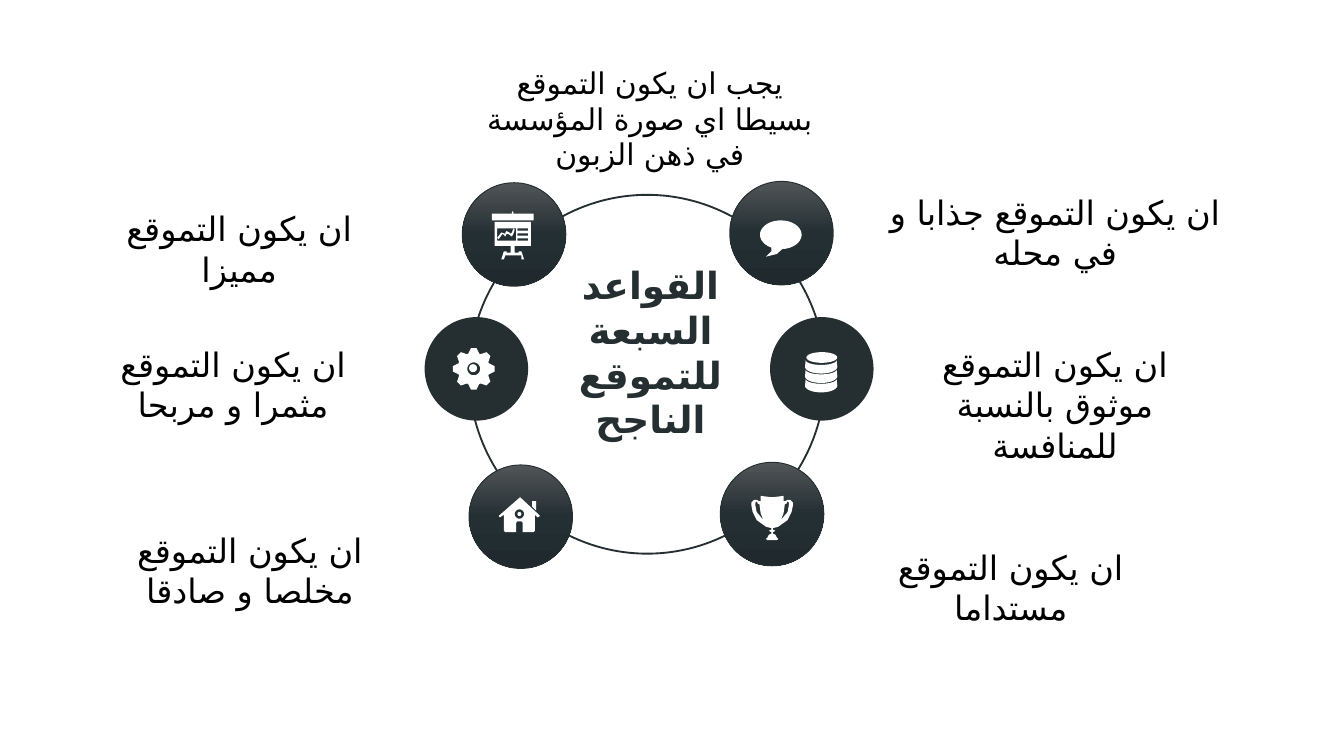
from math import cos, radians, sin

from pptx import Presentation
from pptx.dml.color import RGBColor
from pptx.enum.shapes import MSO_SHAPE
from pptx.enum.text import MSO_ANCHOR, MSO_AUTO_SIZE, PP_ALIGN
from pptx.oxml import parse_xml
from pptx.oxml.ns import nsdecls, qn
from pptx.util import Inches, Pt

OVAL = MSO_SHAPE.OVAL
TOP = MSO_ANCHOR.TOP
GROW = MSO_AUTO_SIZE.SHAPE_TO_FIT_TEXT
CENTER = PP_ALIGN.CENTER

DARK = RGBColor(0x25, 0x2F, 0x32)
WHITE = RGBColor(0xFF, 0xFF, 0xFF)
BLACK = RGBColor(0, 0, 0)
SHADES = ((0, "515557"), (50, "242F33"), (100, "202A2E"))
FONT = "Noto Sans CJK SC"
ARABIC = "DejaVu Sans"
DISC = 0.77

TITLE = "القواعد السبعة للتموقع الناجح"
LABELS = (
    ("يجب ان يكون التموقع بسيطا اي صورة المؤسسة في ذهن الزبون", (3.51, 0.43, 2.65, 0.64), 16),
    ("ان يكون التموقع جذابا و في محله", (6.44, 1.38, 2.82, 0.71), 18),
    ("ان يكون التموقع موثوق بالنسبة للمنافسة", (6.7, 2.51, 2.3, 0.71), 18),
    ("ان يكون التموقع مستداما", (6.21, 4.02, 2.62, 0.4), 18),
    ("ان يكون التموقع مميزا", (0.55, 1.5, 2.46, 0.4), 18),
    ("ان يكون التموقع مثمرا و مربحا", (0.65, 2.51, 2.17, 0.71), 18),
    ("ان يكون التموقع مخلصا و صادقا", (0.58, 3.89, 2.56, 0.71), 18),
)
SHADED = ((3.44, 1.36), (3.49, 3.46), (5.36, 3.44), (5.43, 1.35))
FLAT = ((3.16, 2.36), (5.73, 2.36))

# Icon outlines, in hundredths of an inch
HOUSE = ((387, 370), (371, 384), (372, 385), (375, 383), (375, 395), (376, 396),
         (384, 396), (384, 389), (385, 388), (388, 388), (389, 389), (389, 396),
         (397, 396), (398, 395), (398, 383), (400, 385), (402, 384))
CHIMNEY = ((399, 380), (399, 373), (396, 373), (396, 377))
CUP = ((574, 370), (566, 369), (566, 373), (565, 373), (563, 372), (561, 372),
       (559, 374), (559, 376), (560, 381), (563, 387), (570, 392), (574, 393),
       (574, 394), (572, 395), (574, 396), (574, 397), (572, 398), (571, 400),
       (570, 401), (571, 402))
HANDLE = ((565, 375), (564, 375), (563, 373), (562, 374), (562, 376),
          (563, 381), (568, 387), (566, 382))
RAIL = ((382, 159), (382, 158), (381.5, 157), (381, 158), (381, 159),
        (366, 159), (366, 164), (397, 164), (397, 159))
BOARD = ((395, 183), (395, 165), (368, 165), (368, 183), (380, 183), (380, 188),
         (377, 188), (377, 187), (375, 187), (373, 193), (375, 193), (376, 190),
         (388, 190), (388, 193), (390, 193), (388, 187), (386, 187), (386, 188),
         (383, 188), (383, 183))
CURVE = ((381, 173), (380, 174), (379, 173), (377, 172), (376, 173), (376, 174),
         (373, 173), (370, 177), (371, 178), (374, 174), (376, 176), (377, 174),
         (378, 174), (381, 176), (382, 174), (383, 171), (382, 170))


def box(left, top, right, base):
    return [(left, top), (right, top), (right, base), (left, base)]


def arc(x, y, wide, high, start=0, end=360, steps=32):
    """Points on an ellipse around x, y with radii wide and high."""
    turns = [radians(start + (end - start) * i / steps) for i in range(steps + 1)]
    return [(x + wide * cos(t), y + high * sin(t)) for t in turns]


def mirror(points, axis):
    return [(2 * axis - x, y) for x, y in points]


def paint(shape, color=None, edge=None, width=1):
    shape.shadow.inherit = False
    if color is not None:
        shape.fill.solid()
        shape.fill.fore_color.rgb = color
    if edge is None:
        shape.line.fill.background()
    else:
        shape.line.color.rgb = edge
        shape.line.width = Pt(width)


def add_oval(shapes, left, top, wide, high):
    return shapes.add_shape(OVAL, *map(Inches, (left, top, wide, high)))


def add_dot(shapes, *place):
    paint(add_oval(shapes, *place), WHITE)


def add_disc(shapes, left, top, shaded):
    disc = add_oval(shapes, left, top, DISC, DISC)
    if not shaded:
        paint(disc, DARK)
        return
    stops = "".join(f'<a:gs pos="{pos * 1000}"><a:srgbClr val="{shade}"/></a:gs>'
                    for pos, shade in SHADES)
    grad = parse_xml(f'<a:gradFill {nsdecls("a")} rotWithShape="1"><a:gsLst>{stops}'
                     '</a:gsLst><a:lin ang="5400000" scaled="0"/></a:gradFill>')
    disc.element.spPr.find(qn("a:prstGeom")).addnext(grad)
    paint(disc, edge=DARK, width=0.5)


def add_path(shapes, *loops):
    """One white outline; loops after the first cut holes."""
    sets = [[(Inches(x / 100), Inches(y / 100)) for x, y in loop] for loop in loops]
    pen = shapes.build_freeform(*sets[0][0], scale=1.0)
    for i, points in enumerate(sets):
        if i:
            pen.move_to(*points[0])
        pen.add_line_segments(points[1:], close=True)
    paint(pen.convert_to_shape(), WHITE)


def add_group(slide):
    return slide.shapes.add_group_shape().shapes


def add_house(shapes):
    add_path(shapes, HOUSE, arc(386.5, 382.5, 3.5, 3.5))
    add_path(shapes, CHIMNEY)
    add_dot(shapes, 3.85, 3.81, 0.03, 0.03)


def add_bubble(shapes):
    add_path(shapes, arc(581, 174.7, 15.5, 10.7, 117, 446) + [(578, 189), (570, 191), (574, 187)])


def add_cup(shapes):
    axis = 574.5
    add_path(shapes, list(CUP) + mirror(CUP, axis)[::-1], HANDLE, mirror(HANDLE, axis))


def add_gear(shapes):
    x, y = 352.5, 274.5
    teeth = []
    for turn in range(0, 360, 45):
        for shift, size in ((-20, 12), (-7.5, 15.6), (7.5, 15.6), (20, 12)):
            teeth += arc(x, y, size, size, turn + shift, turn + shift, 1)[:1]
    add_path(shapes, teeth, arc(x, y, 4.8, 4.8))
    add_dot(shapes, 3.49, 2.71, 0.06, 0.06)


def add_stack(shapes):
    for y in (275, 282, 268):
        add_path(shapes, arc(611, y, 11.5, 3.6, 180, 0) + arc(611, y + 5, 12, 5, 0, 180))
    add_dot(shapes, 6, 2.62, 0.23, 0.08)


def add_board(shapes):
    lines = [box(385, y, 393, y + 1.6) for y in (170, 173.7, 177.4)]
    add_path(shapes, RAIL)
    add_path(shapes, BOARD, *lines, box(370, 170, 384, 179))
    add_path(shapes, CURVE)


def set_text(shape, text, place, size, color, bold=False, pads=(0.1, 0.05)):
    for name, value in zip(("left", "top", "width", "height"), place):
        setattr(shape, name, Inches(value))
    frame = shape.text_frame
    side, edge = map(Inches, pads)
    look = {"word_wrap": True, "auto_size": GROW, "vertical_anchor": TOP,
            "margin_left": side, "margin_right": side,
            "margin_top": edge, "margin_bottom": edge}
    for name, value in look.items():
        setattr(frame, name, value)
    para = frame.paragraphs[0]
    para.alignment = CENTER
    para._p.get_or_add_pPr().set("rtl", "1")
    run = para.add_run()
    run.text = text
    for name, value in {"name": FONT, "size": Pt(size), "bold": bold}.items():
        setattr(run.font, name, value)
    run.font.color.rgb = color
    run.font._element.append(parse_xml(f'<a:cs {nsdecls("a")} typeface="{ARABIC}"/>'))


def main():
    deck = Presentation()
    deck.slide_width = Inches(10)
    deck.slide_height = deck.slide_width * 9 // 16
    slide = deck.slides.add_slide(deck.slide_layouts[5])
    shapes = slide.shapes

    ring = add_oval(shapes, 3.49, 1.45, 2.65, 2.67)
    paint(ring, WHITE, DARK)
    title = shapes.title
    ring.element.addnext(title.element)
    set_text(title, TITLE, (4.2, 1.92, 1.28, 1.4), 20, DARK, True, (0.05, 0.03))

    for places, shaded in ((SHADED, True), (FLAT, False)):
        for left, top in places:
            add_disc(shapes, left, top, shaded)
    for draw in (add_house, add_gear, add_stack, add_board):
        draw(add_group(slide))
    for draw in (add_bubble, add_cup):
        draw(shapes)
    for text, place, size in LABELS:
        set_text(shapes.add_textbox(0, 0, 0, 0), text, place, size, BLACK)
    deck.save("out.pptx")


if __name__ == "__main__":
    main()
